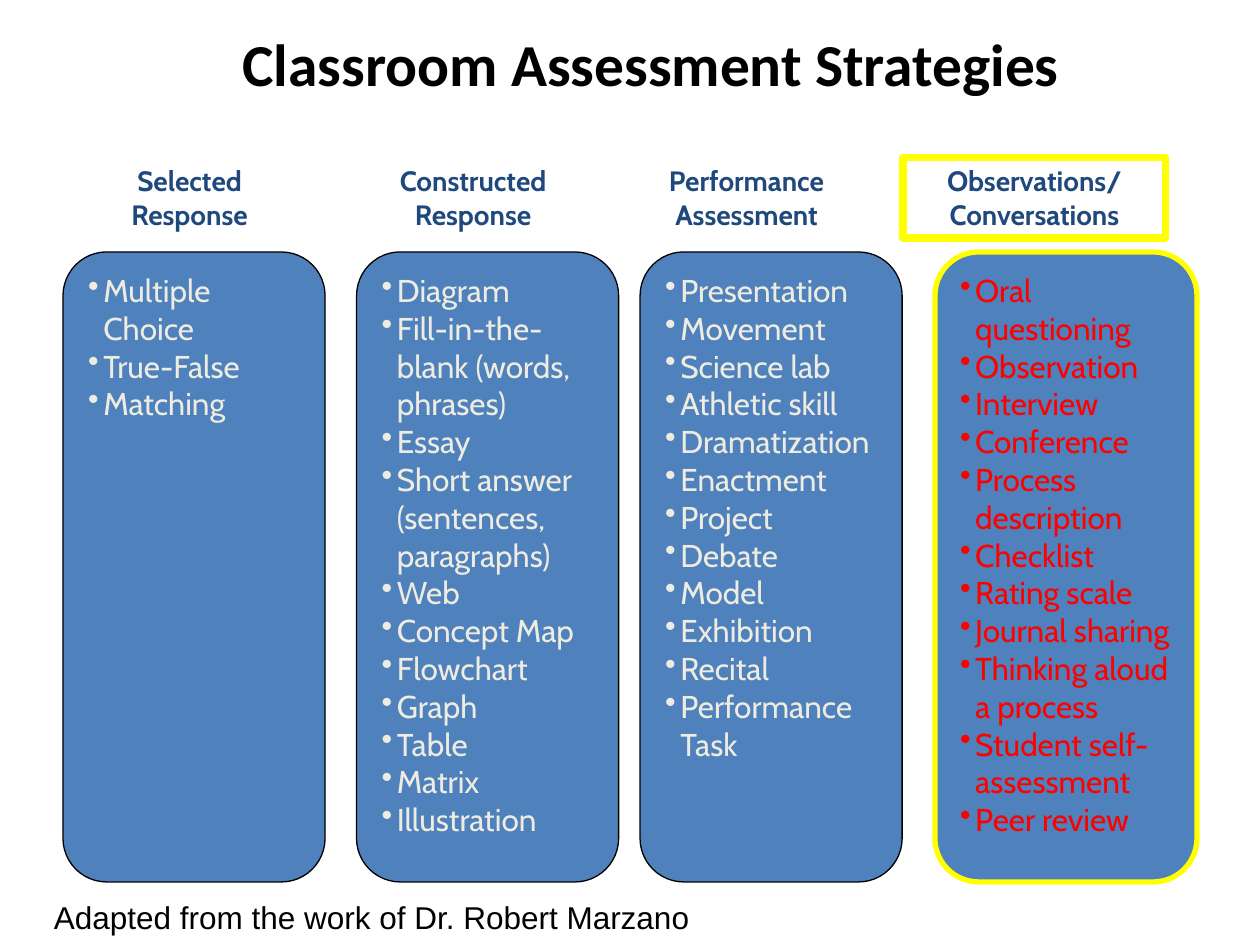
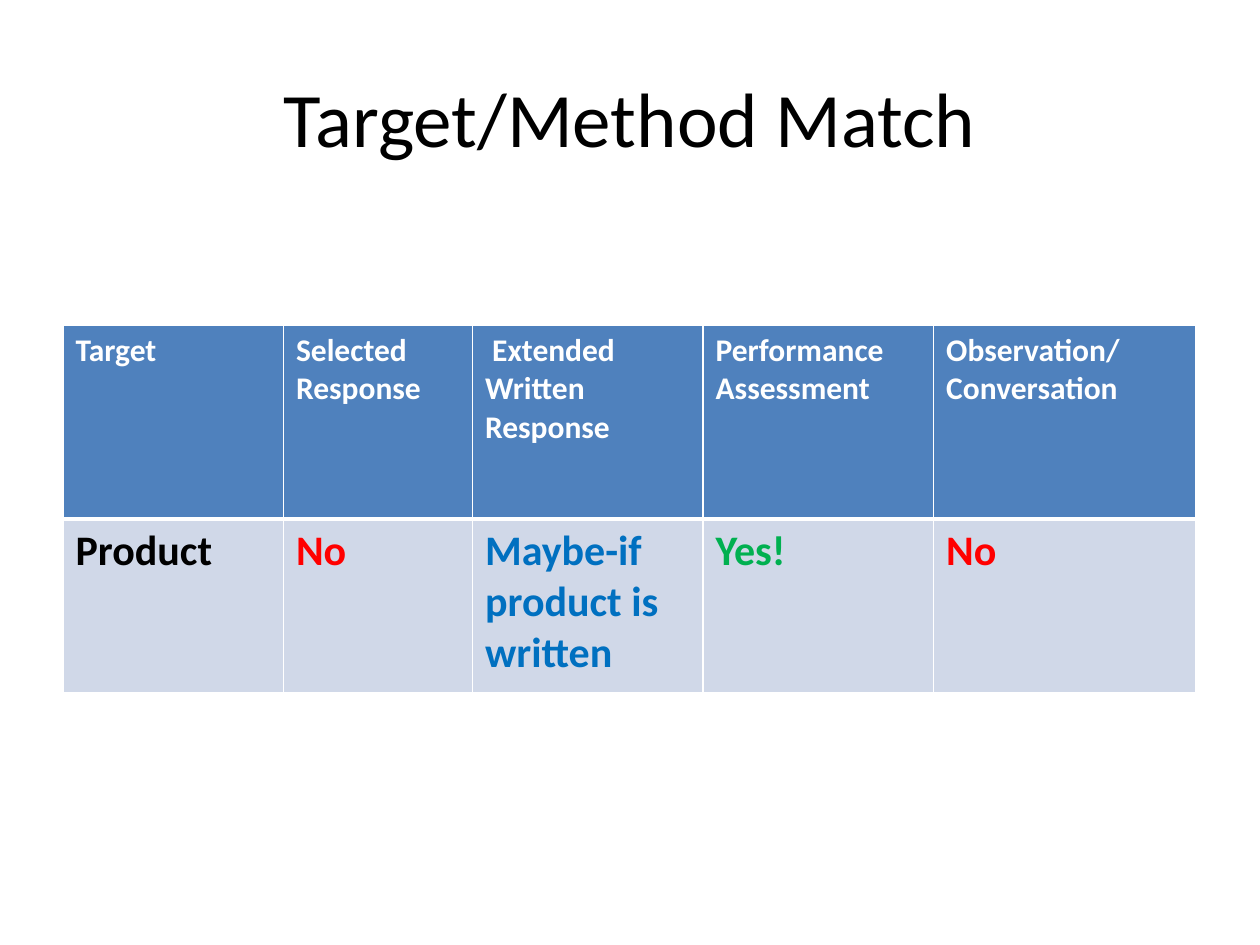
import pptx
import pptx.util
import pptx.dml.color
import pptx.enum.shapes
import pptx.enum.text
import pptx.oxml.ns
import lxml.etree

Inches, Pt = pptx.util.Inches, pptx.util.Pt
RGB = pptx.dml.color.RGBColor
Align, Anchor = pptx.enum.text.PP_ALIGN, pptx.enum.text.MSO_ANCHOR
Shape = pptx.enum.shapes.MSO_SHAPE

BLACK, WHITE = RGB(0, 0, 0), RGB(255, 255, 255)
BLUE, NAVY = RGB(0x4F, 0x81, 0xBD), RGB(0x1F, 0x49, 0x7D)
CREAM, PALE = RGB(0xEE, 0xEC, 0xE1), RGB(0xD0, 0xD8, 0xE8)
RED, YELLOW = RGB(255, 0, 0), RGB(255, 255, 0)
SKY, GREEN = RGB(0, 0x70, 0xC0), RGB(0, 0xB0, 0x50)
BODY, HEAD, NOTE = "Cabin", "Calibri", "Arial"

# heading, heading left, card left, marked, items
CARDS = [
    ("Selected Response", 0.58, 0.5, False,
     ["Multiple Choice", "True-False", "Matching"]),
    ("Constructed\nResponse", 2.83, 2.83, False,
     ["Diagram", "Fill-in-the-blank (words, phrases)", "Essay",
      "Short answer (sentences, paragraphs)", "Web", "Concept Map",
      "Flowchart", "Graph", "Table", "Matrix", "Illustration"]),
    ("Performance Assessment", 5, 5.08, False,
     ["Presentation", "Movement", "Science lab", "Athletic skill",
      "Dramatization", "Enactment", "Project", "Debate", "Model",
      "Exhibition", "Recital", "Performance Task"]),
    ("Observations/\nConversations", 7.17, 7.42, True,
     ["Oral questioning", "Observation", "Interview", "Conference",
      "Process description", "Checklist", "Rating scale",
      "Journal sharing", "Thinking aloud a process",
      "Student self-assessment", "Peer review"]),
]
CARD_TOP, CARD_W, CARD_H = 2, 2.08, 5
HEAD_TOP, HEAD_W, HEAD_H = 1.25, 1.85, 0.64
CREDIT = "Adapted from the work of Dr. Robert Marzano"

# column width, heading, answer, answer colour
MATCH = [
    (1.75, "Target", "Product", BLACK),
    (1.5, "Selected Response", "No", RED),
    (1.83, " Extended Written Response", "Maybe-if product is written", SKY),
    (1.83, "Performance Assessment", "Yes!", GREEN),
    (2.08, "Observation/\nConversation", "No", RED),
]
ROWS = [1.54, 1.38]


def box(left, top, width, height):
    return [Inches(n) for n in (left, top, width, height)]


def add(parent, tag, **attrs):
    node = lxml.etree.SubElement(parent, pptx.oxml.ns.qn(tag))
    for key, value in attrs.items():
        node.set(key, str(value))
    return node


def write(frame, lines, size, color, font, bold=False, align=Align.LEFT,
          dots=False):
    """Fill a text frame with one paragraph per line."""
    frame.word_wrap = True
    for i, line in enumerate(lines):
        para = frame.paragraphs[0] if i == 0 else frame.add_paragraph()
        para.alignment = align
        if dots:
            props = para._p.get_or_add_pPr()
            props.set("marL", str(Inches(0.12)))
            props.set("indent", str(-Inches(0.12)))
            add(props, "a:buChar", char="•")
        run = para.add_run()
        run.text = line
        run.font.size, run.font.name = Pt(size), font
        run.font.bold, run.font.color.rgb = bold, color


def start(deck, text, place, size, bold=False):
    """Add a title-only slide and set its title."""
    slide = deck.slides.add_slide(deck.slide_layouts[5])
    title = slide.shapes.title
    title.left, title.top, title.width, title.height = box(*place)
    title.text_frame.vertical_anchor = Anchor.MIDDLE
    write(title.text_frame, [text], size, BLACK, HEAD, bold, Align.CENTER)
    return slide


def panel(slide, kind, place, line, weight):
    """Add an outlined shape whose text starts at the top."""
    shape = slide.shapes.add_shape(kind, *box(*place))
    shape.shadow.inherit = False
    shape.line.color.rgb, shape.line.width = line, Pt(weight)
    shape.text_frame.vertical_anchor = Anchor.TOP
    return shape


def card(slide, left, marked, items):
    line, weight = (YELLOW, 3) if marked else (BLACK, 0.75)
    shape = panel(slide, Shape.ROUNDED_RECTANGLE,
                  (left, CARD_TOP, CARD_W, CARD_H), line, weight)
    shape.fill.solid()
    shape.fill.fore_color.rgb = BLUE
    if marked:
        shape.text_frame.margin_right = 0
    write(shape.text_frame, items, 18, RED if marked else CREAM, BODY,
          dots=True)


def heading(slide, text, left, marked):
    if marked:
        shape = panel(slide, Shape.RECTANGLE,
                      (left, HEAD_TOP, CARD_W, HEAD_H), YELLOW, 4.5)
        shape.fill.background()
    else:
        shape = slide.shapes.add_textbox(
            *box(left, HEAD_TOP, HEAD_W, HEAD_H))
    write(shape.text_frame, text.split("\n"), 16, NAVY, BODY, True,
          Align.CENTER)


def paint(cell, fill, top, base):
    """Give a cell white borders and a fill."""
    props = cell._tc.get_or_add_tcPr()
    for side, weight in zip("LRTB", (1, 1, top, base)):
        edge = add(props, "a:ln" + side, w=Pt(weight))
        add(add(edge, "a:solidFill"), "a:srgbClr", val=WHITE)
    cell.fill.solid()
    cell.fill.fore_color.rgb = fill


def plans(deck):
    slide = start(deck, "Classroom Assessment Strategies",
                  (1.08, 0, 8.17, 0.99), 34, True)
    for text, x, left, marked, items in CARDS:
        card(slide, left, marked, items)
        heading(slide, text, x, marked)
    credit = slide.shapes.add_textbox(*box(0.33, 7.08, 6.17, 0.4))
    write(credit.text_frame, [CREDIT], 18, BLACK, NOTE)


def match(deck):
    slide = start(deck, "Target/Method Match", (0.5, 0.3, 9, 1.25), 44)
    table = slide.shapes.add_table(
        len(ROWS), len(MATCH), *box(0.5, 2.58, 9, sum(ROWS))).table
    for row, height in zip(table.rows, ROWS):
        row.height = Inches(height)
    for i, (width, head, reply, color) in enumerate(MATCH):
        table.columns[i].width = Inches(width)
        top, base = table.cell(0, i), table.cell(1, i)
        paint(top, BLUE, 1, 3)
        paint(base, PALE, 3, 1)
        write(top.text_frame, head.split("\n"), 18, WHITE, HEAD, True)
        write(base.text_frame, [reply], 24, color, HEAD, True)


def main():
    deck = pptx.Presentation()
    deck.slide_width, deck.slide_height = Inches(10), Inches(7.5)
    plans(deck)
    match(deck)
    deck.save("out.pptx")


if __name__ == "__main__":
    main()
